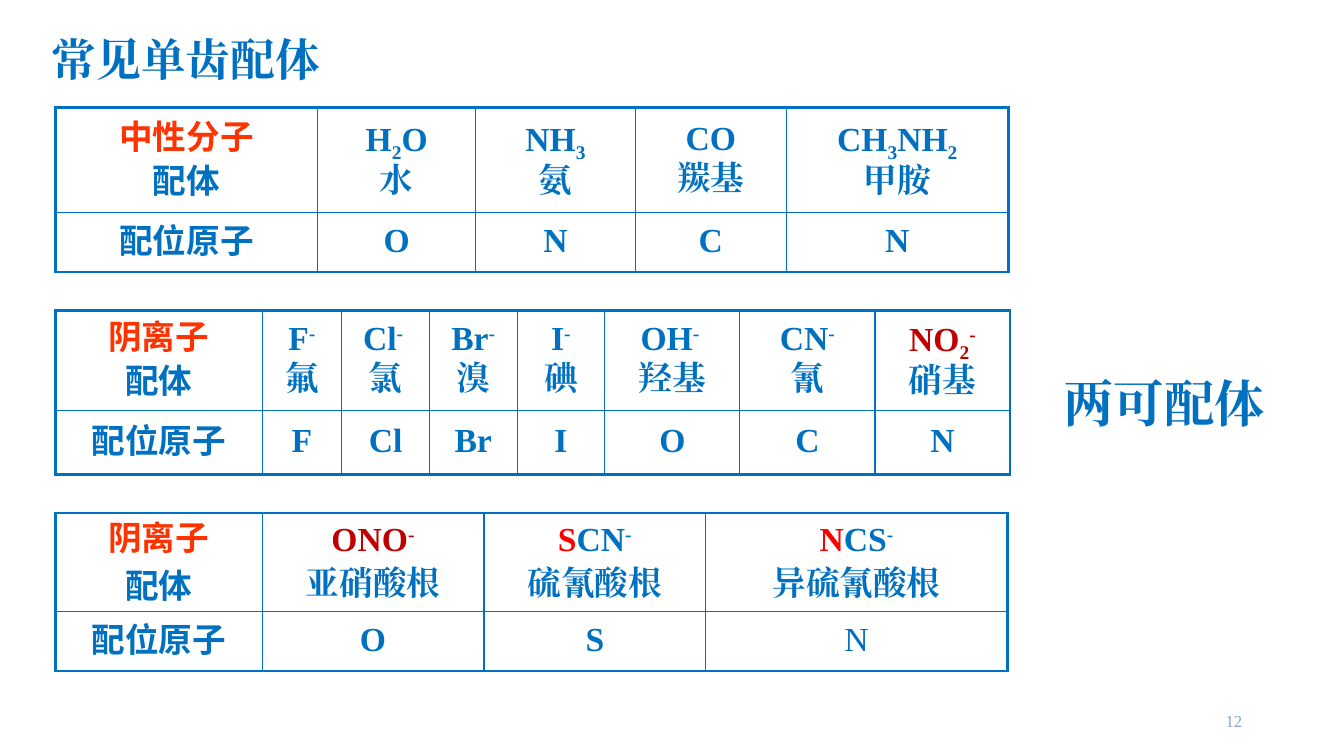
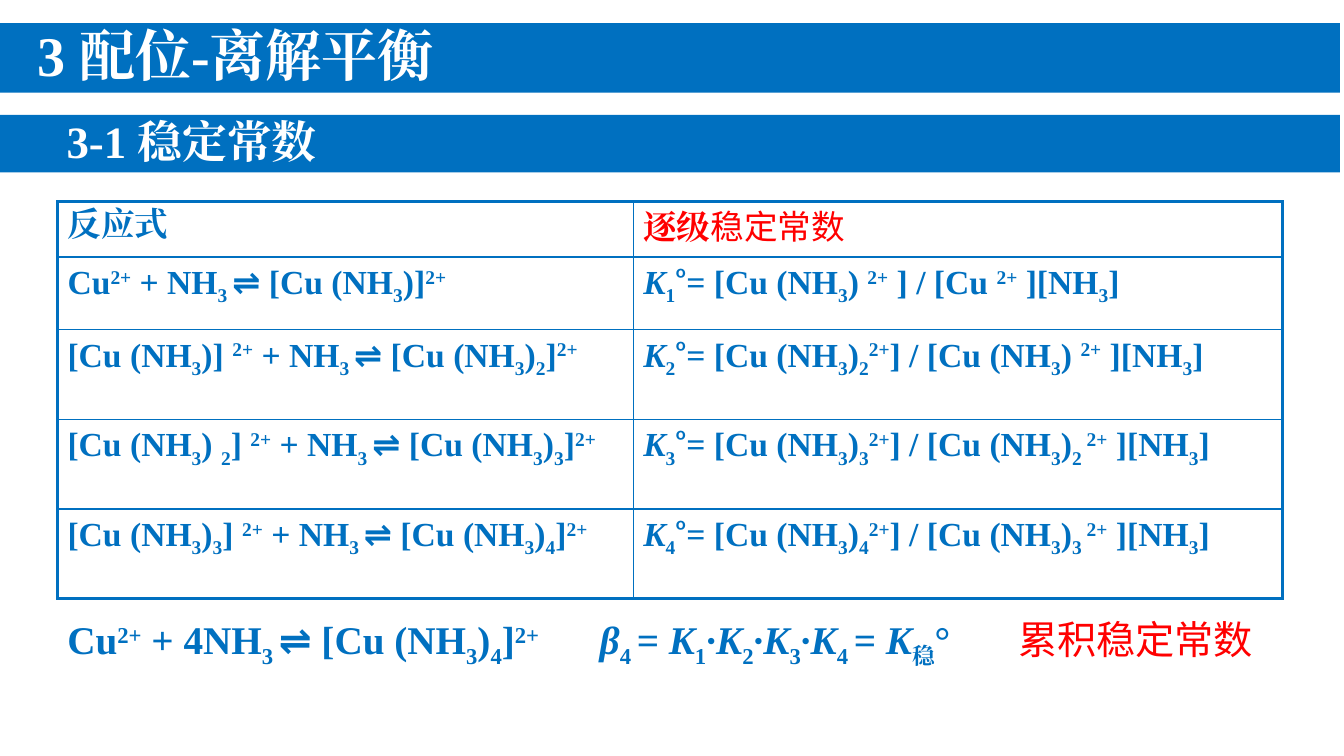
from lxml.etree import SubElement
from pptx import Presentation
from pptx.dml.color import RGBColor
from pptx.enum.shapes import MSO_SHAPE
from pptx.enum.text import MSO_ANCHOR, MSO_AUTO_SIZE, PP_ALIGN
from pptx.oxml.ns import qn
from pptx.util import Inches, Pt

COLORS = {
    "blue": "0070C0",
    "orange": "FF3300",
    "dark": "C00000",
    "red": "FF0000",
    "white": "FFFFFF",
    "number": "8CA4D2",
}
SERIF, SANS = "Times New Roman", "Cabin"
MARKS = {
    "_": {"base": -25},
    "^": {"base": 30},
    "/": {"italic": True},
    "'": {"bold": False},
    "~": {"font": SANS},
    "@": {"color": "orange"},
    "!": {"color": "dark"},
    "#": {"color": "red"},
}
THICK, THIN = 2.25, 1


def rgb(name):
    """Return a palette colour."""
    return RGBColor.from_string(COLORS[name])


def add_run(p, text, size, color="blue", bold=True, italic=False, font=SERIF, base=0):
    """Add one formatted run."""
    r = p.add_run()
    r.text = text
    f = r.font
    f.size, f.bold, f.italic, f.name = Pt(size), bold, italic, font
    f.color.rgb = rgb(color)
    rPr = f._element
    rPr.set("lang", "zh-CN")
    if base:
        rPr.set("baseline", str(base * 1000))
    SubElement(rPr, qn("a:ea")).set("typeface", font)


def add_rich(p, markup, size, **style):
    """Add plain text and {marked} pieces as runs."""
    for i, piece in enumerate(markup.replace("}", "{").split("{")):
        look = dict(style)
        while i % 2 and piece[0] in MARKS:
            look.update(MARKS[piece[0]])
            piece = piece[1:]
        if piece:
            add_run(p, piece, size, **look)


def set_space_before(p, percent):
    """Set space before as a share of the line."""
    before = SubElement(p._p.get_or_add_pPr(), qn("a:spcBef"))
    SubElement(before, qn("a:spcPct")).set("val", str(percent * 1000))


def set_tabs(p, stops):
    """Set left tab stops in inches."""
    tabs = SubElement(p._p.get_or_add_pPr(), qn("a:tabLst"))
    for stop in stops:
        tab = SubElement(tabs, qn("a:tab"))
        tab.set("pos", str(Inches(stop)))
        tab.set("algn", "l")


def place(sp, left, top, width, height):
    """Set position and size in inches."""
    sp.left, sp.top, sp.width, sp.height = map(Inches, (left, top, width, height))


def fill_heading(sp, text, size, color, indent=0.1):
    """Write a left-aligned heading into a shape."""
    tf = sp.text_frame
    tf.word_wrap, tf.auto_size = True, MSO_AUTO_SIZE.NONE
    tf.vertical_anchor, tf.margin_left = MSO_ANCHOR.MIDDLE, Inches(indent)
    p = tf.paragraphs[0]
    p.alignment, p.line_spacing = PP_ALIGN.LEFT, 0.9
    add_run(p, text, size, color)


def paint_band(sp):
    """Give a heading its solid blue band."""
    sp.fill.solid()
    sp.fill.fore_color.rgb = rgb("blue")
    sp.line.fill.background()


def add_text(s, box, markup, size, align=PP_ALIGN.LEFT, anchor=MSO_ANCHOR.TOP, tabs=(), **style):
    """Add a one-paragraph text box."""
    tf = s.shapes.add_textbox(*map(Inches, box)).text_frame
    tf.word_wrap, tf.vertical_anchor = True, anchor
    p = tf.paragraphs[0]
    p.alignment = align
    if tabs:
        set_tabs(p, tabs)
    add_rich(p, markup, size, **style)


def set_borders(cell, widths):
    """Draw the left, right, top and bottom cell lines."""
    tcPr = cell._tc.get_or_add_tcPr()
    for side, width in zip("LRTB", widths):
        ln = SubElement(tcPr, qn("a:ln" + side))
        ln.set("w", str(Pt(width)))
        fill = SubElement(ln, qn("a:solidFill"))
        SubElement(fill, qn("a:srgbClr")).set("val", COLORS["blue"])


def fill_cell(cell, markup, centred, spacing):
    """Write the lines of one cell."""
    if centred:
        cell.margin_left = cell.margin_right = 0
        cell.vertical_anchor = MSO_ANCHOR.MIDDLE
    tf = cell.text_frame
    for i, line in enumerate(markup.split("\n")):
        p = tf.add_paragraph() if i else tf.paragraphs[0]
        p.alignment = PP_ALIGN.CENTER if centred else PP_ALIGN.LEFT
        p.line_spacing = spacing
        if i:
            set_space_before(p, 20)
        add_rich(p, line, 24)


def add_grid(s, left, top, cols, heights, rows, centred=True, spacings=None):
    """Add a table with a thick frame and thin inner lines."""
    frame = s.shapes.add_table(len(rows), len(cols), *map(Inches, (left, top, sum(cols), sum(heights))))
    table = frame.table
    table.first_row = table.horz_banding = False
    for column, width in zip(table.columns, cols):
        column.width = Inches(width)
    for i, row in enumerate(rows):
        table.rows[i].height = Inches(heights[i])
        for j, markup in enumerate(row):
            cell = table.cell(i, j)
            outer = (j == 0, j == len(cols) - 1, i == 0, i == len(rows) - 1)
            set_borders(cell, [THICK if edge else THIN for edge in outer])
            cell.fill.background()
            fill_cell(cell, markup, centred, spacings[i] if spacings else 1.0)


def build_ligands(prs):
    """Build the slide of common monodentate ligands."""
    s = prs.slides.add_slide(prs.slide_layouts[5])
    place(s.shapes.title, 0.41, 0.34, 11.5, 0.55)
    fill_heading(s.shapes.title, "常见单齿配体", 32, "blue")
    anion, donor = "{@~阴离子}\n{~配体}", "{~配位原子}"
    add_grid(s, 0.55, 1.07, [2.6, 1.57, 1.58, 1.5, 2.2], [1.04, 0.59], [
        ["{@~中性分子}\n{~配体}", "H{_2}O\n水", "NH{_3}\n氨", "CO\n羰基", "CH{_3}NH{_2}\n甲胺"],
        [donor, "O", "N", "C", "N"],
    ], spacings=(0.9, 0.9))
    add_grid(s, 0.55, 3.08, [2.05, 0.79] + [0.87] * 3 + [1.34] * 3, [0.99, 0.64], [
        [anion, "F{^-}\n氟", "Cl{^- }\n氯", "Br{^-}\n溴", "I{^-}\n碘", "OH{^- }\n羟基",
         "CN{^-}\n氰", "{!NO}{!_2}{!^-}\n硝基"],
        [donor, "F", "Cl", "Br", "I", "O", "C", "N"],
    ], spacings=(0.9, 0.9))
    add_grid(s, 0.55, 5.09, [2.05, 2.2, 2.2, 2.99], [0.93, 0.59], [
        [anion, "{!ONO}{!^-}\n亚硝酸根", "{#S}CN{^-}\n硫氰酸根", "{#N}CS{^-}\n异硫氰酸根"],
        [donor, "O", "S", "{'N}"],
    ], spacings=(1.0, 0.9))
    add_text(s, (10.45, 3.64, 2.21, 0.71), "两可配体", 36)
    add_text(s, (9.42, 6.95, 3, 0.4), "12", 12, PP_ALIGN.RIGHT, MSO_ANCHOR.MIDDLE,
             color="number", bold=False)


def build_constants(prs):
    """Build the slide of stepwise stability constants."""
    s = prs.slides.add_slide(prs.slide_layouts[5])
    title = s.shapes.title
    place(title, 0, 0.23, 13.29, 0.69)
    section = s.shapes.add_shape(MSO_SHAPE.RECTANGLE, *map(Inches, (0, 1.14, 13.29, 0.57)))
    section.shadow.inherit = False
    for sp, text, size, indent in ((title, "3 配位-离解平衡", 40, 0.37),
                                   (section, "3-1 稳定常数", 32, 0.66)):
        paint_band(sp)
        fill_heading(sp, text, size, "white", indent)
    add_grid(s, 0.57, 2, [5.71, 6.44], [0.55, 0.72] + [0.89] * 3, [
        ["反应式", "{#逐级}{#~'稳定常数}"],
        ["Cu{^2+} + NH{_3 }{~⇌} [Cu (NH{_3})]{^2+}",
         "{/K}{_1}{~°}= [Cu (NH{_3}) {^2+} ] / [Cu {^2+} ][NH{_3}]"],
        ["[Cu (NH{_3})] {^2+} + NH{_3 }{~⇌} [Cu (NH{_3}){_2}]{^2+}",
         "{/K}{_2}{~°}= [Cu (NH{_3}){_2}{^2+}] / [Cu (NH{_3}) {^2+} ][NH{_3}]"],
        ["[Cu (NH{_3}) {_2}] {^2+} + NH{_3 }{~⇌} [Cu (NH{_3}){_3}]{^2+}",
         "{/K}{_3}{~°}= [Cu (NH{_3}){_3}{^2+}] / [Cu (NH{_3}){_2 }{^2+} ][NH{_3}]"],
        ["[Cu (NH{_3}){_3}] {^2+} + NH{_3 }{~⇌} [Cu (NH{_3}){_4}]{^2+}",
         "{/K}{_4}{~°}= [Cu (NH{_3}){_4}{^2+}] / [Cu (NH{_3}){_3 }{^2+} ][NH{_3}]"],
    ], centred=False)
    overall = ("Cu{^2+} + 4NH{_3 }{~⇌} [Cu (NH{_3}){_4}]{^2+}\t"
               "{/β}{_4 }={/ K}{_1}∙{/K}{_2}∙{/K}{_3}∙{/K}{_4 }={/ K}{_稳}°\t"
               "{#~'累积稳定常数}")
    add_text(s, (0.57, 6.06, 12.37, 0.57), overall, 28, tabs=(5.28, 9.43))


def main():
    """Build and save the presentation."""
    prs = Presentation()
    prs.slide_width, prs.slide_height = Inches(13.33), Inches(7.5)
    build_ligands(prs)
    build_constants(prs)
    prs.save("out.pptx")


if __name__ == "__main__":
    main()
